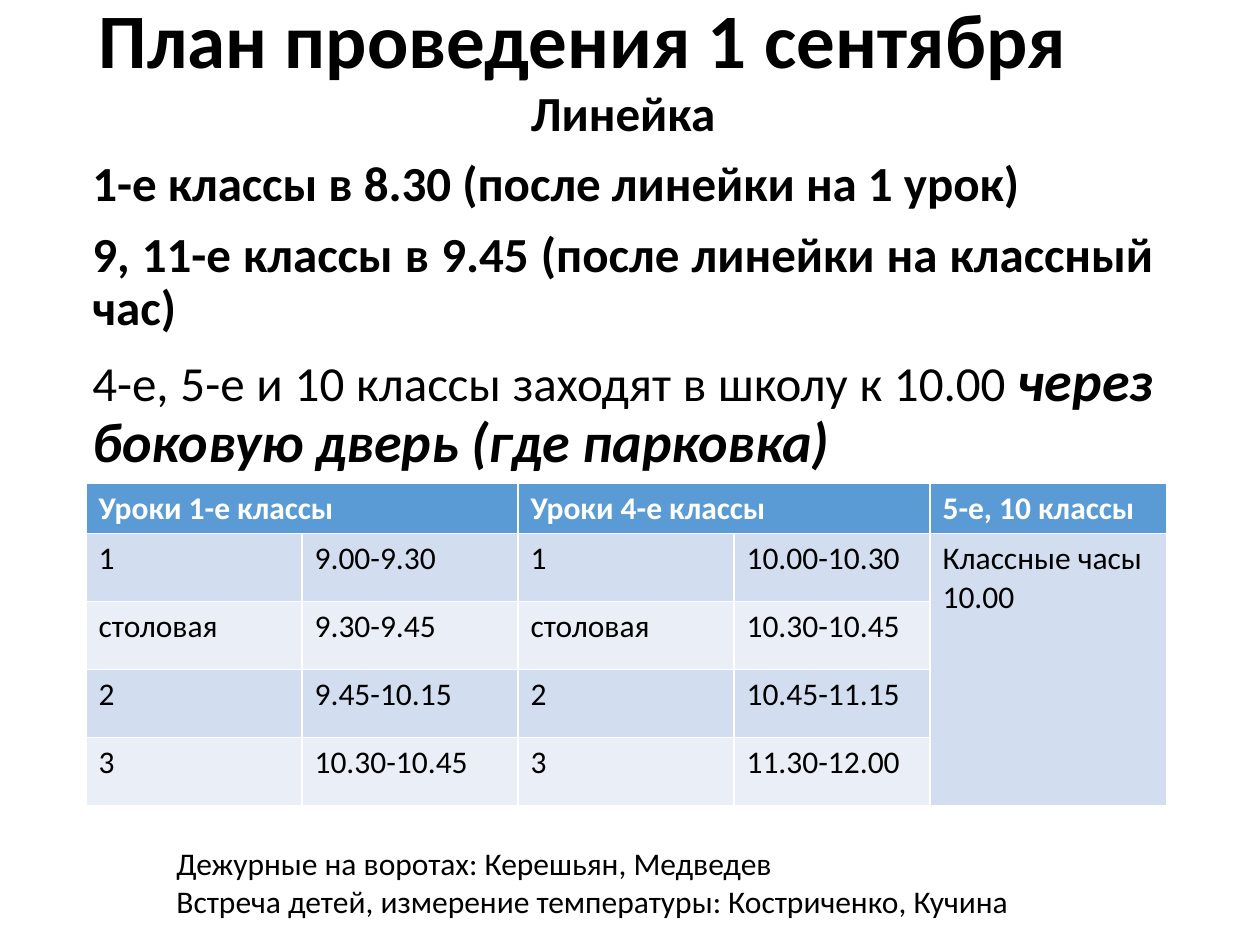
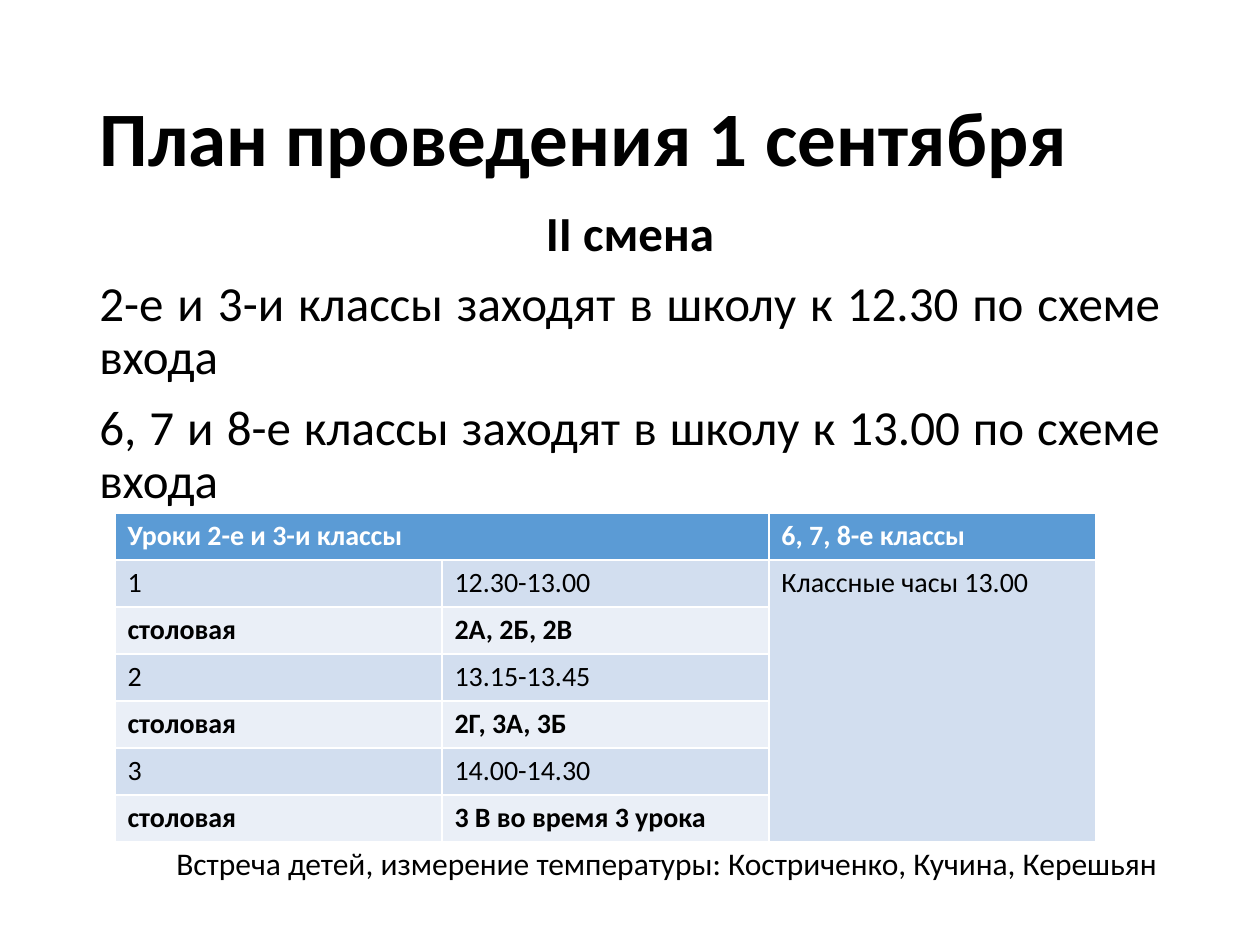
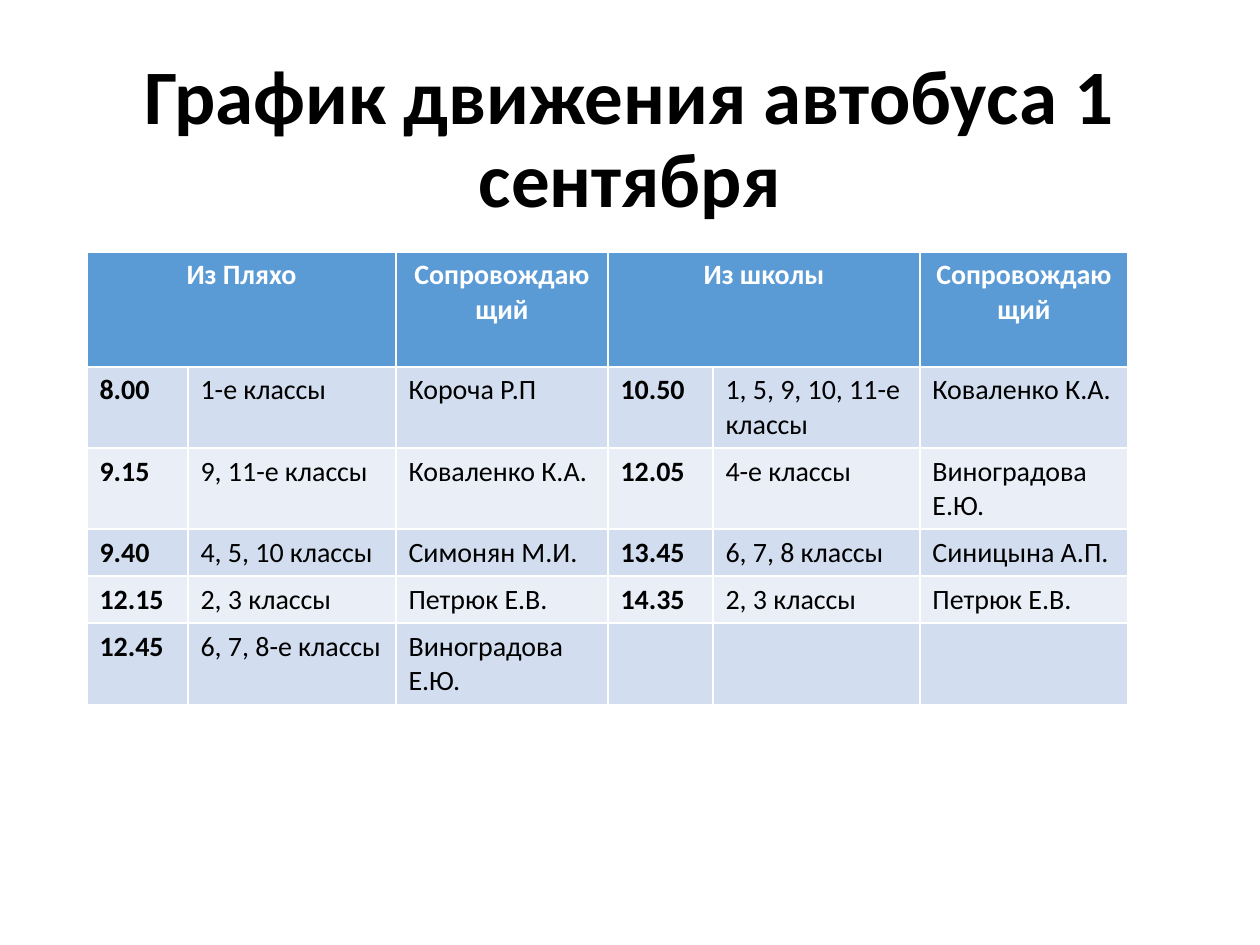
from pptx import Presentation
from pptx import util as u
from pptx.dml.color import RGBColor
from pptx.enum import text

EMU_PER_PX = 914400 / 126
FONT = "Calibri"
BLACK = RGBColor(0x00, 0x00, 0x00)
WHITE = RGBColor(0xFF, 0xFF, 0xFF)
HEADER_BLUE = RGBColor(0x5B, 0x9B, 0xD5)
BANDS = (RGBColor(0xD2, 0xDE, 0xEF), RGBColor(0xEA, 0xEF, 0xF7))
TITLE_ONLY = 5
PLAN_TITLE = "План проведения 1 сентября"
LEFT, CENTER, JUSTIFY = (text.PP_ALIGN.LEFT, text.PP_ALIGN.CENTER,
                         text.PP_ALIGN.JUSTIFY)


def px(length):
    """Turn pixels into EMU."""
    return u.Emu(round(length * EMU_PER_PX))


def style(font, size, bold=False, color=BLACK):
    """Format the font of a paragraph."""
    font.name, font.size, font.bold = FONT, u.Pt(size), bold
    font.color.rgb = color


def add_titled_page(deck, title, box, align=LEFT):
    """Add a page and place its title in the box."""
    page = deck.slides.add_slide(deck.slide_layouts[TITLE_ONLY])
    holder = page.shapes.title
    holder.left, holder.top, holder.width, holder.height = map(px, box)
    frame = holder.text_frame
    frame.text = title
    frame.word_wrap = True
    frame.auto_size = text.MSO_AUTO_SIZE.NONE
    frame.vertical_anchor = text.MSO_ANCHOR.MIDDLE
    para = frame.paragraphs[0]
    para.alignment, para.line_spacing = align, 0.9
    style(para.font, 44, bold=True)
    return page


def add_paragraphs(frame, lines):
    """Yield one paragraph for each line, the first being the existing one."""
    for index, line in enumerate(lines):
        para = frame.add_paragraph() if index else frame.paragraphs[0]
        para.text = line
        yield para


def add_body(page, box, heading, lines, bold_lines=0, emphasis=None):
    """Add a centred heading, justified lines and an emphasised ending."""
    frame = page.shapes.add_textbox(*map(px, box)).text_frame
    frame.word_wrap = True
    for index, para in enumerate(add_paragraphs(frame, [heading, *lines])):
        para.alignment = JUSTIFY if index else CENTER
        para.line_spacing = 0.9
        para.space_before = u.Pt(10 if index else 0)
        style(para.font, 28, bold=index <= bold_lines)
    if emphasis:
        span = para.add_run()
        span.text = emphasis
        span.font.size = u.Pt(32)
        span.font.bold = span.font.italic = True


def add_notes_line(page, box, lines):
    """Add the list of people on duty below the table."""
    frame = page.shapes.add_textbox(*map(px, box)).text_frame
    frame.word_wrap = False
    for para in add_paragraphs(frame, lines):
        style(para.font, 18)


def add_schedule(page, corner, widths, heights, rows, merges, size,
                 is_bold=lambda row, column: False, header_align=LEFT):
    """Add a banded table with a blue header row."""
    table = page.shapes.add_table(
        len(rows), len(widths), *map(px, corner),
        px(sum(widths)), px(sum(heights))).table
    for column, width in zip(table.columns, widths):
        column.width = px(width)
    for row, height in zip(table.rows, heights):
        row.height = px(height)
    for r, row in enumerate(rows):
        for c, label in enumerate(row):
            cell = table.cell(r, c)
            cell.fill.solid()
            cell.fill.fore_color.rgb = BANDS[(r - 1) % 2] if r else HEADER_BLUE
            cell.text = label
            para = cell.text_frame.paragraphs[0]
            para.alignment = LEFT if r else header_align
            style(para.font, size, bold=r == 0 or is_bold(row, c),
                  color=BLACK if r else WHITE)
    for first, last in merges:
        table.cell(*first).merge(table.cell(*last))


def build_morning(deck):
    """Build the page about the assembly and the first shift."""
    page = add_titled_page(deck, PLAN_TITLE, (86, -48, 1086, 183))
    add_body(page, (80, 83, 1086, 649), "Линейка", [
        "1-е классы в 8.30 (после линейки на 1 урок)",
        "9, 11-е классы в 9.45 (после линейки на классный час)",
        "4-е, 5-е и 10 классы заходят в школу к 10.00 ",
    ], bold_lines=2, emphasis="через боковую дверь (где парковка)")
    rows = [
        ("Уроки 1-е классы", "", "Уроки 4-е классы", "", "5-е, 10 классы"),
        ("1", "9.00-9.30", "1", "10.00-10.30", "Классные часы 10.00"),
        ("столовая", "9.30-9.45", "столовая", "10.30-10.45", ""),
        ("2", "9.45-10.15", "2", "10.45-11.15", ""),
        ("3", "10.30-10.45", "3", "11.30-12.00", ""),
    ]
    add_schedule(page, (86, 483), (216, 216, 216, 196, 237),
                 [50] + [68] * 4, rows,
                 [((0, 0), (0, 1)), ((0, 2), (0, 3)), ((1, 4), (4, 4))], 18)
    add_notes_line(page, (164, 838, 861, 89), [
        "Дежурные на воротах: Керешьян, Медведев",
        "Встреча детей, измерение температуры: Костриченко, Кучина",
    ])


def build_second_shift(deck):
    """Build the page about the second shift."""
    page = add_titled_page(deck, PLAN_TITLE, (87, 50, 1086, 183))
    add_body(page, (87, 203, 1086, 649), "II смена", [
        "2-е и 3-и классы заходят в школу к 12.30 по схеме входа",
        "6, 7 и 8-е классы заходят в школу к 13.00 по схеме входа",
    ])
    rows = [
        ("Уроки 2-е и 3-и классы", "", "6, 7, 8-е классы"),
        ("1", "12.30-13.00", "Классные часы 13.00"),
        ("столовая", "2А, 2Б, 2В", ""),
        ("2", "13.15-13.45", ""),
        ("столовая", "2Г, 3А, 3Б", ""),
        ("3", "14.00-14.30", ""),
        ("столовая", "3 В во время 3 урока", ""),
    ]
    add_schedule(page, (115, 513), [327] * 3, [47] * 7, rows,
                 [((0, 0), (0, 1)), ((1, 2), (6, 2))], 16,
                 is_bold=lambda row, column: row[0] == "столовая")
    add_notes_line(page, (164, 838, 1019, 50), [
        "Встреча детей, измерение температуры: Костриченко, Кучина, Керешьян",
    ])


def build_bus(deck):
    """Build the page with the bus timetable."""
    page = add_titled_page(deck, "График движения автобуса 1 сентября",
                           (87, 50, 1086, 183), CENTER)
    rows = [
        ("Из Пляхо", "", "Сопровождающий", "Из школы", "", "Сопровождающий"),
        ("8.00", "1-е классы", "Короча Р.П",
         "10.50", "1, 5, 9, 10, 11-е классы", "Коваленко К.А."),
        ("9.15", "9, 11-е классы", "Коваленко К.А.",
         "12.05", "4-е классы", "Виноградова Е.Ю."),
        ("9.40", "4, 5, 10 классы", "Симонян М.И.",
         "13.45", "6, 7, 8 классы", "Синицына А.П."),
        ("12.15", "2, 3 классы", "Петрюк Е.В.",
         "14.35", "2, 3 классы", "Петрюк Е.В."),
        ("12.45", "6, 7, 8-е классы", "Виноградова Е.Ю.", "", "", ""),
    ]
    add_schedule(page, (87, 252), (101, 208, 212, 105, 207, 208),
                 (115, 81, 81, 47, 47, 81), rows,
                 [((0, 0), (0, 1)), ((0, 3), (0, 4))], 16,
                 is_bold=lambda row, column: column in (0, 3),
                 header_align=CENTER)


def main():
    """Build the deck and save it."""
    deck = Presentation()
    deck.slide_width, deck.slide_height = px(1260), px(945)
    build_morning(deck)
    build_second_shift(deck)
    build_bus(deck)
    deck.save("out.pptx")


if __name__ == "__main__":
    main()
